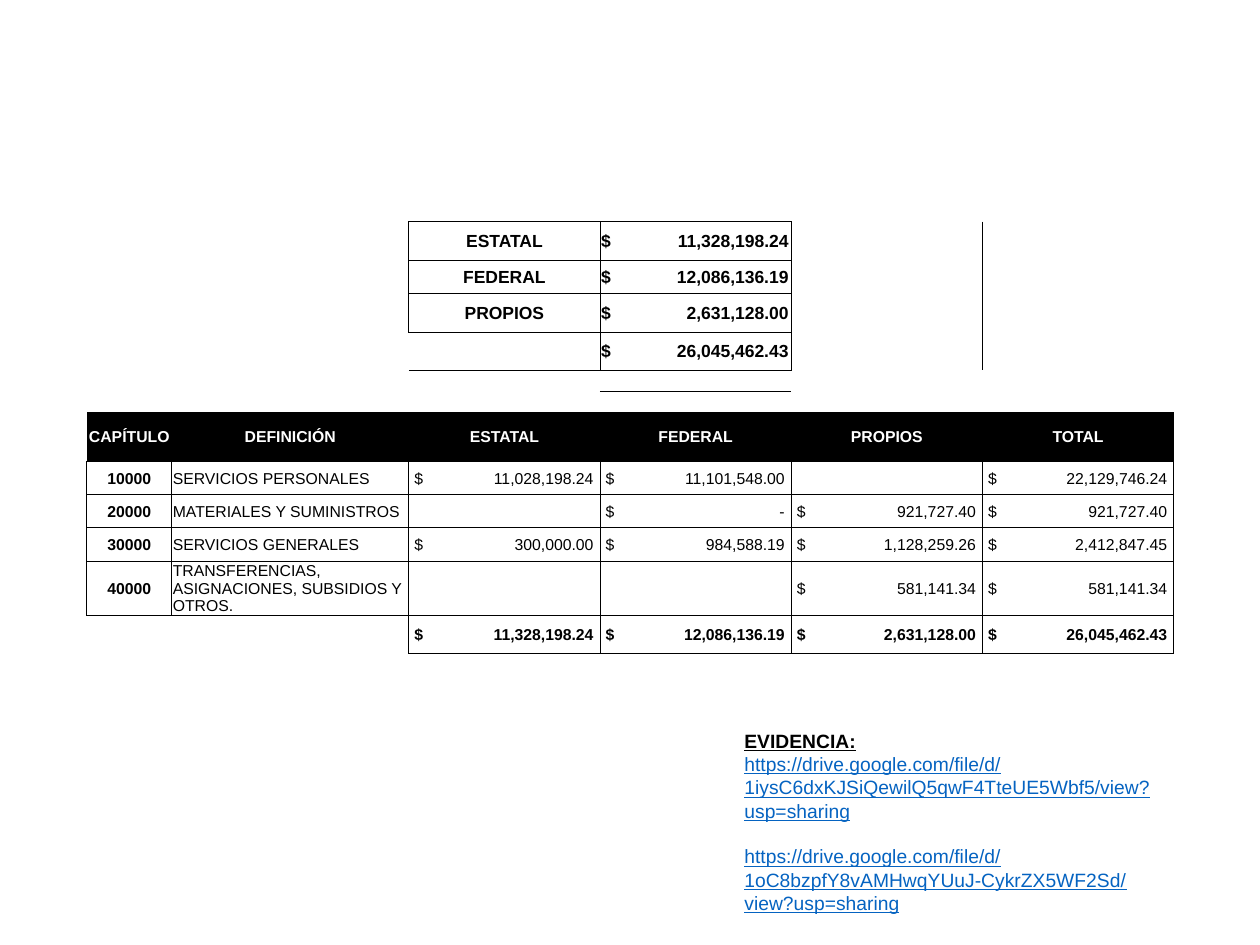
"""Build a budget slide with income by source, spending by chapter and evidence links."""
from lxml import etree
from pptx import Presentation
from pptx.dml.color import RGBColor
from pptx.enum.text import MSO_ANCHOR, PP_ALIGN
from pptx.oxml.ns import qn
from pptx.util import Pt


def color(value):
    return RGBColor.from_string(value)


def add_text(paragraph, text, size, ink, **formats):
    run = paragraph.add_run()
    run.text = text
    run.font.color.rgb = color(ink)
    for name, value in {"name": "Arial", "size": Pt(size), **formats}.items():
        setattr(run.font, name, value)


BLACK, WHITE, LINK = "000000", "FFFFFF", "0563C1"
NO_STYLE = "{2D5ABB26-0587-4C30-8999-92F81FD0307C}"
COLUMN_WIDTHS = [48.5, 135.5] + [109.3] * 4
ROW_HEIGHTS = [22, 19, 22, 22, 12, 12, 28, 19, 19, 19, 19, 22]
HEADER_ROW, TOTAL_ROW = 6, 11
ROWS = [
    ["", "", "ESTATAL", "11,328,198.24", "", ""],
    ["", "", "FEDERAL", "12,086,136.19", "", ""],
    ["", "", "PROPIOS", "2,631,128.00", "", ""],
    ["", "", "", "26,045,462.43", "", ""],
    [""] * 6,
    [""] * 6,
    ["CAPÍTULO", "DEFINICIÓN", "ESTATAL", "FEDERAL", "PROPIOS", "TOTAL"],
    ["10000", "SERVICIOS PERSONALES", "11,028,198.24", "11,101,548.00", "", "22,129,746.24"],
    ["20000", "MATERIALES Y SUMINISTROS", "", "-", "921,727.40", "921,727.40"],
    ["30000", "SERVICIOS GENERALES", "300,000.00", "984,588.19", "1,128,259.26", "2,412,847.45"],
    ["40000", "TRANSFERENCIAS, ASIGNACIONES, SUBSIDIOS Y OTROS.", "", "", "581,141.34", "581,141.34"],
    ["", "", "11,328,198.24", "12,086,136.19", "2,631,128.00", "26,045,462.43"],
]
boxed = {(row, column) for row in range(3) for column in (2, 3)} | {(3, 3)}
boxed |= {(row, column) for row in range(HEADER_ROW + 1, TOTAL_ROW) for column in range(6)}
boxed |= {(TOTAL_ROW, column) for column in range(2, 6)}
SIDES = {"a:lnL": (0, -1), "a:lnR": (0, 1), "a:lnT": (-1, 0), "a:lnB": (1, 0)}

presentation = Presentation()
presentation.slide_width, presentation.slide_height = Pt(720), Pt(540)
slide = presentation.slides.add_slide(presentation.slide_layouts[6])

table_frame = slide.shapes.add_table(
    len(ROWS), len(COLUMN_WIDTHS), Pt(49.6), Pt(126.7), Pt(sum(COLUMN_WIDTHS)), Pt(sum(ROW_HEIGHTS))
)
table = table_frame.table
table.first_row = table.horz_banding = False
table._tbl.tblPr.find(qn("a:tableStyleId")).text = NO_STYLE
for column, width in zip(table.columns, COLUMN_WIDTHS):
    column.width = Pt(width)
for row, height in zip(table.rows, ROW_HEIGHTS):
    row.height = Pt(height)

for row_index, values in enumerate(ROWS):
    for column_index, value in enumerate(values):
        cell = table.cell(row_index, column_index)
        summary = row_index < HEADER_ROW
        header = row_index == HEADER_ROW
        amount = bool(value) and not header and column_index > (2 if summary else 1)
        margins = {"margin_left": 3.2 if amount and not summary else 0.7,
                   "margin_right": 0.7, "margin_top": 0.7, "margin_bottom": 0}
        for name, margin in margins.items():
            setattr(cell, name, Pt(margin))
        cell.vertical_anchor = MSO_ANCHOR.MIDDLE

        properties = cell._tc.get_or_add_tcPr()
        for tag, (down, right) in SIDES.items():
            neighbour = (row_index + down, column_index + right)
            if (row_index, column_index) in boxed or neighbour in boxed:
                line = etree.SubElement(properties, qn(tag), w=str(Pt(0.5)))
                fill = etree.SubElement(line, qn("a:solidFill"))
                etree.SubElement(fill, qn("a:srgbClr"), val=BLACK)
        if header:
            cell.fill.solid()
            cell.fill.fore_color.rgb = color(BLACK)
        else:
            cell.fill.background()

        paragraph = cell.text_frame.paragraphs[0]
        if not value:
            etree.SubElement(paragraph._p, qn("a:endParaRPr"), sz="600")
            continue
        if amount:
            tabs = etree.SubElement(paragraph._p.get_or_add_pPr(), qn("a:tabLst"))
            etree.SubElement(tabs, qn("a:tab"), pos=str(Pt(107 if summary else 102.4)), algn="r")
            value = f"$\t{value}"
        elif header or summary or column_index == 0:
            paragraph.alignment = PP_ALIGN.CENTER
        bold = summary or header or column_index == 0 or row_index == TOTAL_ROW
        add_text(paragraph, value, 10 if summary else 9, WHITE if header else BLACK, bold=bold)

evidence = slide.shapes.add_textbox(Pt(418.3), Pt(413.3), Pt(252), Pt(87)).text_frame
evidence.word_wrap = True
add_text(evidence.paragraphs[0], "EVIDENCIA:", 11, BLACK, bold=True, underline=True)
LINKS = {
    "https://drive.google.com/file/d/1iysC6dxKJSiQewilQ5qwF4TteUE5Wbf5/view?usp=sharing": 0,
    "https://drive.google.com/file/d/1oC8bzpfY8vAMHwqYUuJ-CykrZX5WF2Sd/view?usp=sharing": 13,
}
for address, gap in LINKS.items():
    paragraph = evidence.add_paragraph()
    paragraph.space_before = Pt(gap)
    add_text(paragraph, address, 11, LINK, underline=True)

presentation.save("out.pptx")
